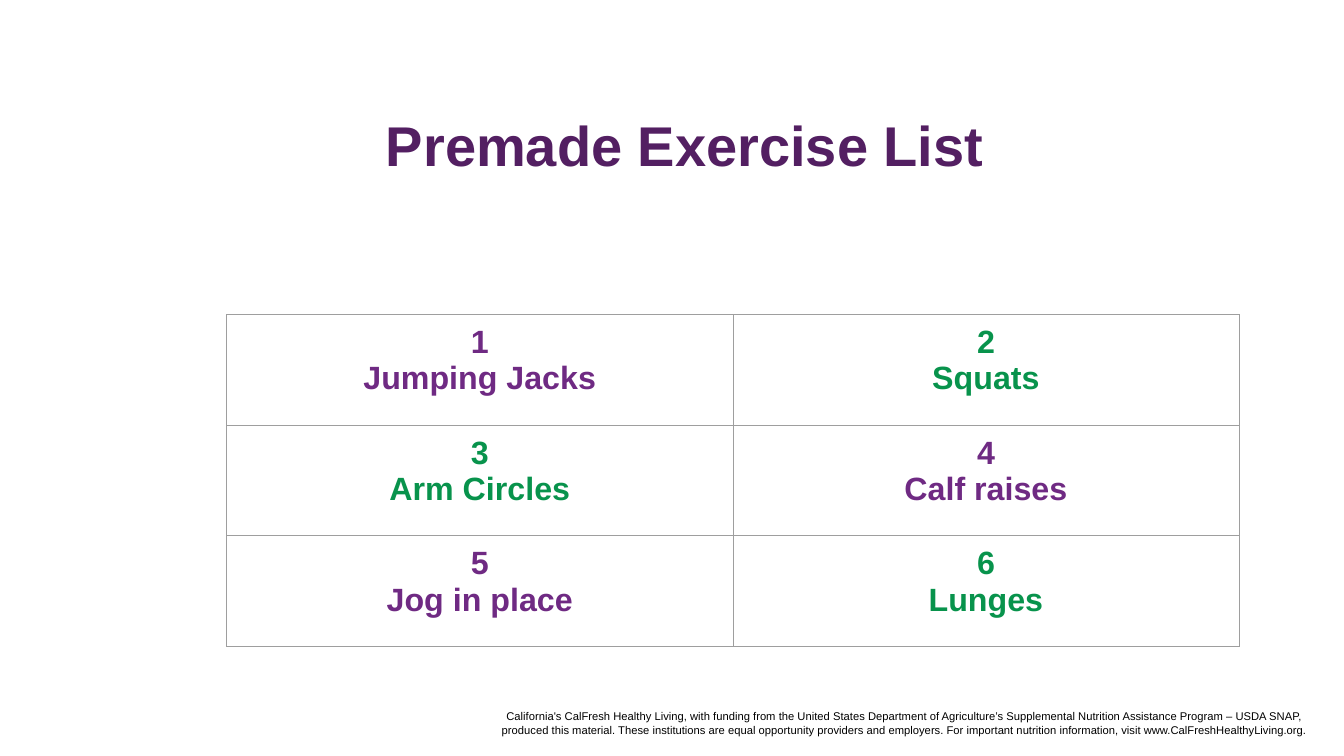
from lxml import etree
from pptx import Presentation
from pptx.dml.color import RGBColor
from pptx.enum.text import MSO_ANCHOR, PP_ALIGN
from pptx.oxml.ns import qn
from pptx.util import Inches, Pt

CENTER = PP_ALIGN.CENTER
MIDDLE = MSO_ANCHOR.MIDDLE
TITLE_PURPLE = RGBColor(0x53, 0x1F, 0x62)
PURPLE = RGBColor(0x6F, 0x2A, 0x83)
GREEN = RGBColor(0x08, 0x93, 0x4C)
GRAY = RGBColor(0x9E, 0x9E, 0x9E)
BLACK = RGBColor(0, 0, 0)

TITLE = "Premade Exercise List"
EXERCISES = ["Jumping Jacks", "Squats", "Arm Circles",
             "Calf raises", "Jog in place", "Lunges"]
FUNDING = (
    "California's CalFresh Healthy Living, with funding from the United States "
    "Department of Agriculture’s Supplemental Nutrition Assistance Program – USDA SNAP, "
    "produced this material. These institutions are equal opportunity providers and "
    "employers. For important nutrition information, visit www.CalFreshHealthyLiving.org."
)


def write(tf, *lines, size, color, bold=False, spacing=None):
    """Fill a text frame with one centred paragraph per line."""
    tf.word_wrap = True
    for i, line in enumerate(lines):
        p = tf.paragraphs[0] if i == 0 else tf.add_paragraph()
        p.alignment = CENTER
        if spacing:
            p.line_spacing = spacing
        r = p.add_run()
        r.text = line
        r.font.name = "Arial"
        r.font.size = Pt(size)
        r.font.bold = bold
        r.font.color.rgb = color


def set_borders(cell, color, width):
    tcPr = cell._tc.get_or_add_tcPr()
    for i, side in enumerate(("lnL", "lnR", "lnT", "lnB")):
        ln = etree.Element(qn(f"a:{side}"), w=str(Pt(width)))
        fill = etree.SubElement(ln, qn("a:solidFill"))
        etree.SubElement(fill, qn("a:srgbClr"), val=str(color))
        tcPr.insert(i, ln)


class SlideBuilder:
    def __init__(self, prs):
        self.s = prs.slides.add_slide(prs.slide_layouts[5])

    def title(self, text, x, y, w, h):
        sp = self.s.shapes.title
        sp.left, sp.top, sp.width, sp.height = map(Inches, (x, y, w, h))
        sp.text_frame.vertical_anchor = MIDDLE
        write(sp.text_frame, text, size=40, color=TITLE_PURPLE, bold=True, spacing=0.9)

    def note(self, text, x, y, w, h):
        sp = self.s.shapes.add_textbox(*map(Inches, (x, y, w, h)))
        write(sp.text_frame, text, size=8, color=BLACK)

    def exercise_table(self, names, cols, x, y, w, h):
        """Number the names row by row, alternating colours like a checkerboard."""
        rows = len(names) // cols
        table = self.s.shapes.add_table(rows, cols, *map(Inches, (x, y, w, h))).table
        table.first_row = table.horz_banding = False
        for i, name in enumerate(names):
            row, col = divmod(i, cols)
            cell = table.cell(row, col)
            cell.margin_left = cell.margin_right = Inches(0.1)
            cell.margin_top = cell.margin_bottom = Inches(0.1)
            cell.fill.background()
            set_borders(cell, GRAY, 0.75)
            color = GREEN if (row + col) % 2 else PURPLE
            write(cell.text_frame, str(i + 1), name, size=23, color=color, bold=True)


def main():
    prs = Presentation()
    prs.slide_width, prs.slide_height = Inches(13.33), Inches(7.5)
    slide = SlideBuilder(prs)
    slide.note(FUNDING, 4.78, 6.99, 8.39, 0.4)
    slide.title(TITLE, 1.04, 0.88, 11.5, 1.19)
    slide.exercise_table(EXERCISES, 2, 2.25, 3.12, 10.04, 3.29)
    prs.save("out.pptx")


if __name__ == "__main__":
    main()
